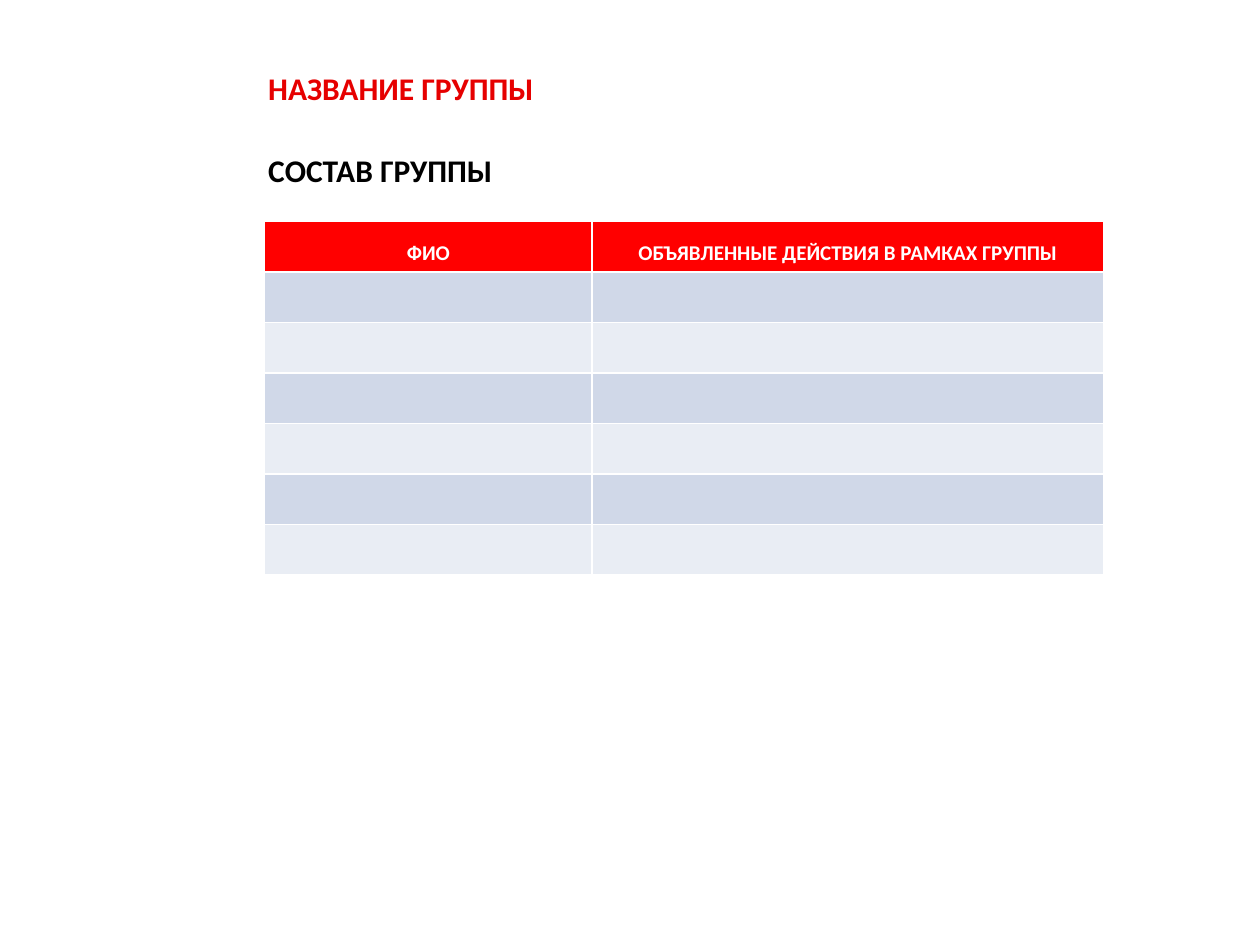
"""Build a slide with a group's name and a table of its members."""
from pptx import Presentation
from pptx.dml.color import RGBColor
from pptx.enum.text import MSO_ANCHOR, PP_ALIGN
from pptx.util import Inches, Pt

COLORS = {"title": "E60000", "text": "000000", "header": "FF0000",
          "header_text": "FFFFFF", "odd": "D0D8E8", "even": "E9EDF4"}
HEADINGS = [
    ("НАЗВАНИЕ ГРУППЫ", "title", (2.03, 0.5, 7.15, 0.39), MSO_ANCHOR.MIDDLE),
    ("СОСТАВ ГРУППЫ", "text", (2.03, 1.15, 5, 0.4), MSO_ANCHOR.TOP),
]
HEADERS = ["ФИО", "ОБЪЯВЛЕННЫЕ ДЕЙСТВИЯ В РАМКАХ ГРУППЫ"]
COL_WIDTHS = [2.6, 4.06]
MEMBER_ROWS = 6
ROW_HEIGHT = 0.4
TABLE_LEFT, TABLE_TOP = 2.1, 1.76


def rgb(name):
    return RGBColor.from_string(COLORS[name])


def style(p, size, color):
    for r in p.runs:
        r.font.name, r.font.size, r.font.bold = "Calibri", Pt(size), True
        r.font.color.rgb = rgb(color)


def add_heading(s, text, color, box, anchor):
    tf = s.shapes.add_textbox(*map(Inches, box)).text_frame
    tf.word_wrap = True
    tf.vertical_anchor = anchor
    tf.text = text
    style(tf.paragraphs[0], 18, color)


def add_members(s):
    rows = MEMBER_ROWS + 1
    table = s.shapes.add_table(
        rows, len(HEADERS), Inches(TABLE_LEFT), Inches(TABLE_TOP),
        Inches(sum(COL_WIDTHS)), Inches(rows * ROW_HEIGHT)).table
    for column, width in zip(table.columns, COL_WIDTHS):
        column.width = Inches(width)
    for i, row in enumerate(table.rows):
        fill = "header" if i == 0 else "odd" if i % 2 else "even"
        for cell in row.cells:
            cell.fill.solid()
            cell.fill.fore_color.rgb = rgb(fill)
    for cell, text in zip(table.rows[0].cells, HEADERS):
        cell.text = text
        p = cell.text_frame.paragraphs[0]
        p.alignment = PP_ALIGN.CENTER
        p.line_spacing = 1.5
        style(p, 12, "header_text")


def main():
    prs = Presentation()
    prs.slide_width, prs.slide_height = Inches(10), Inches(7.5)
    s = prs.slides.add_slide(prs.slide_layouts[6])
    for heading in HEADINGS:
        add_heading(s, *heading)
    add_members(s)
    prs.save("out.pptx")


if __name__ == "__main__":
    main()
